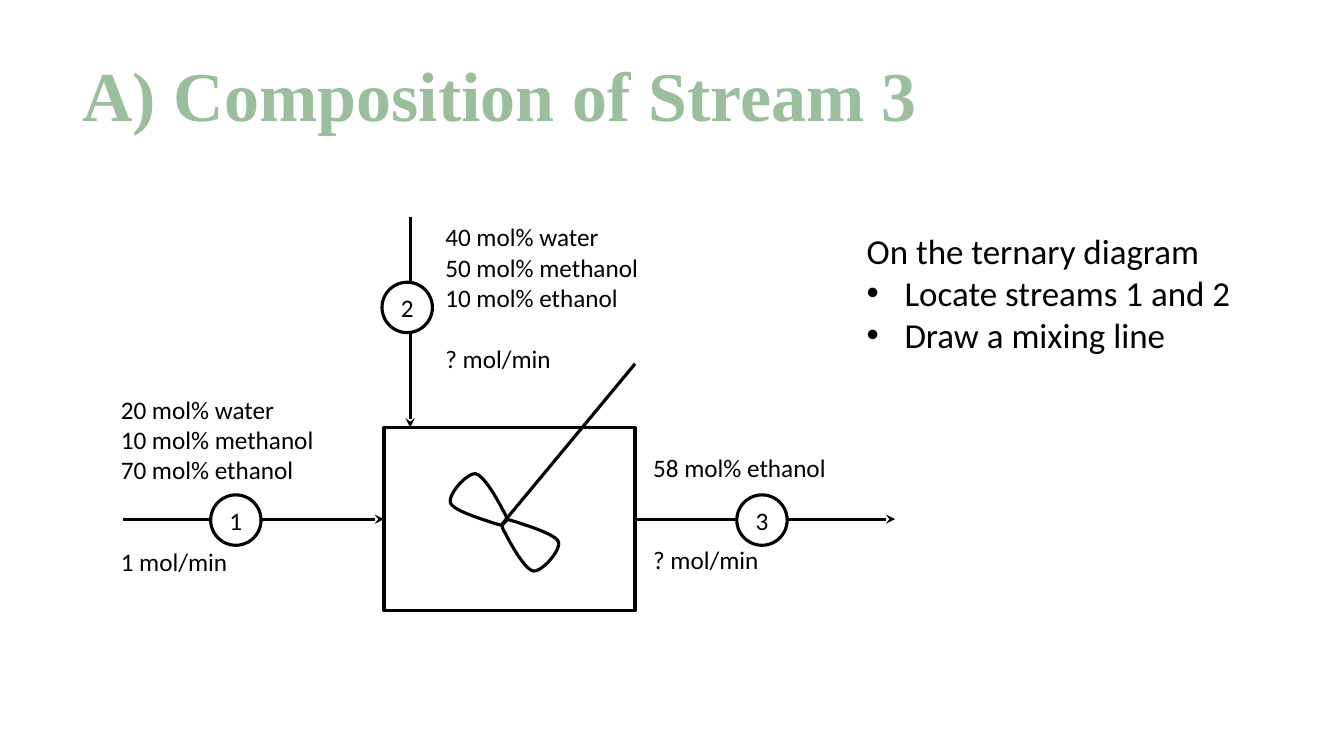
from lxml import etree
from pptx import Presentation
from pptx import util as u
from pptx.dml import color
from pptx.enum import shapes, text
from pptx.oxml import ns

Pt = u.Pt
theme = {
    "ink": color.RGBColor(0, 0, 0),
    "paper": color.RGBColor(255, 255, 255),
    "green": color.RGBColor(0x9B, 0xBF, 0x9C),
    "body": "Calibri", "head": "Times New Roman",
    "small": Pt(18), "large": Pt(25), "huge": Pt(50), "line": Pt(2.25),
}
row = 21.97  # height of one line of small text

deck = Presentation()
deck.slide_width, deck.slide_height = Pt(960), Pt(540)
slide = deck.slides.add_slide(deck.slide_layouts[6])


def write(frame, lines, look, tint, **form):
    """Fill a text frame with (words, space before) pairs."""
    for key, val in form.items():
        setattr(frame, key, val)
    for i, (words, gap) in enumerate(lines):
        para = frame.add_paragraph() if i else frame.paragraphs[0]
        para.space_before = Pt(gap)
        run = para.add_run()
        run.text = words
        for key, val in look.items():
            setattr(run.font, key, val)
        run.font.color.rgb = tint


def ink(item, fill=None):
    """Draw an item with the black line, no shadow and an optional fill."""
    item.line.color.rgb = theme["ink"]
    item.line.width = theme["line"]
    if hasattr(item, "fill"):
        item.shadow.inherit = False
        if fill is None:
            item.fill.background()
        else:
            item.fill.solid()
            item.fill.fore_color.rgb = fill
    else:
        etree.SubElement(item._element.spPr, ns.qn("a:effectLst"))


small = {"name": theme["body"], "size": theme["small"]}
large = {"name": theme["body"], "size": theme["large"]}
huge = {"name": theme["head"], "size": theme["huge"], "bold": True}
grow = text.MSO_AUTO_SIZE.SHAPE_TO_FIT_TEXT
middle = text.MSO_ANCHOR.MIDDLE

# Title
title = slide.shapes.add_textbox(Pt(51.8), Pt(23.8), Pt(980), Pt(92.9))
write(title.text_frame, [("A) Composition of Stream 3", 0)], huge, theme["green"],
      word_wrap=True, vertical_anchor=middle)
title.text_frame.paragraphs[0].line_spacing = 0.9

# Mixing tank
tank = slide.shapes.add_shape(shapes.MSO_SHAPE.RECTANGLE,
                              Pt(274.3), Pt(305.3), Pt(179.3), Pt(131))
ink(tank)

# Stream arrows
for x1, y1, x2, y2 in [(453.6, 370.8, 639.4, 370.8),
                       (87.8, 370.8, 274.3, 370.8),
                       (293, 154.8, 293, 305.3)]:
    flow = slide.shapes.add_connector(shapes.MSO_CONNECTOR.STRAIGHT,
                                      Pt(x1), Pt(y1), Pt(x2), Pt(y2))
    ink(flow)
    etree.SubElement(flow.line._get_or_add_ln(), ns.qn("a:tailEnd"), type="stealth")

# Stream labels
labels = [
    (79.2, 277.9, 165.6, 138.2, [("20 mol% water", 0), ("10 mol% methanol", 0),
                                 ("70 mol% ethanol", 0), ("1 mol/min", 2 * row)]),
    (311, 154.8, 169.2, 116.6, [("40 mol% water", 0), ("50 mol% methanol", 0),
                                ("10 mol% ethanol", 0), ("? mol/min", row)]),
    (459.4, 319.7, 181.4, 94.3, [("58 mol% ethanol", 0), ("? mol/min", 2 * row)]),
]
for x, y, w, h, lines in labels:
    box = slide.shapes.add_textbox(Pt(x), Pt(y), Pt(w), Pt(h))
    write(box.text_frame, lines, small, theme["ink"], word_wrap=True, auto_size=grow)

# Numbered stream markers
for num, x, y in [("1", 150.5, 353.5), ("2", 272.9, 201.6), ("3", 526.3, 353.5)]:
    disc = slide.shapes.add_shape(shapes.MSO_SHAPE.OVAL, Pt(x), Pt(y), Pt(36), Pt(36))
    ink(disc, theme["paper"])
    write(disc.text_frame, [(num, 0)], small, theme["ink"], vertical_anchor=middle)
    disc.text_frame.paragraphs[0].alignment = text.PP_ALIGN.CENTER

# Stirrer: a shaft and two blades, the second turned half round the hub
mixer = slide.shapes.add_group_shape()
shaft = mixer.shapes.add_connector(shapes.MSO_CONNECTOR.STRAIGHT,
                                   Pt(453.6), Pt(259.9), Pt(358.6), Pt(374.4))
ink(shaft)
start = (360, 373.7)
curves = [
    ((358.6, 375.1), (359.3, 375.8), (352.8, 373.7)),
    ((346.3, 371.5), (324, 365), (321.8, 359.3)),
    ((319.7, 353.5), (333.4, 337.7), (339.8, 338.4)),
    ((346.3, 339.8), (357.1, 360), (360, 365.8)),
    ((363.6, 371.5), (361.4, 372.2), start),
]
edge = [start]
steps = 12
for c1, c2, end in curves:
    begin = edge[-1]
    for n in range(1, steps + 1):
        t = n / steps
        s = 1 - t
        edge.append(tuple(s**3 * a + 3 * s * s * t * b + 3 * s * t * t * c + t**3 * d
                          for a, b, c, d in zip(begin, c1, c2, end)))
hub = (360.35, 373.15)
turned = [(2 * hub[0] - x, 2 * hub[1] - y) for x, y in edge]
for rim in (edge, turned):
    dots = [(Pt(x), Pt(y)) for x, y in rim]
    pen = mixer.shapes.build_freeform(*dots[0], scale=1.0)
    pen.add_line_segments(dots[1:-1], close=True)
    ink(pen.convert_to_shape())

# Task list
tasks = slide.shapes.add_textbox(Pt(612), Pt(160.6), Pt(277.2), Pt(97.9))
write(tasks.text_frame, [("On the ternary diagram", 0), ("Locate streams 1 and 2", 0),
                         ("Draw a mixing line", 0)], large, theme["ink"],
      word_wrap=False, auto_size=grow)
for para in tasks.text_frame.paragraphs[1:]:
    props = para._p.get_or_add_pPr()
    props.set("marL", str(Pt(27)))
    props.set("indent", str(-Pt(27)))
    etree.SubElement(props, ns.qn("a:buFont"), typeface="Arial")
    etree.SubElement(props, ns.qn("a:buChar"), char="•")

deck.save("out.pptx")
